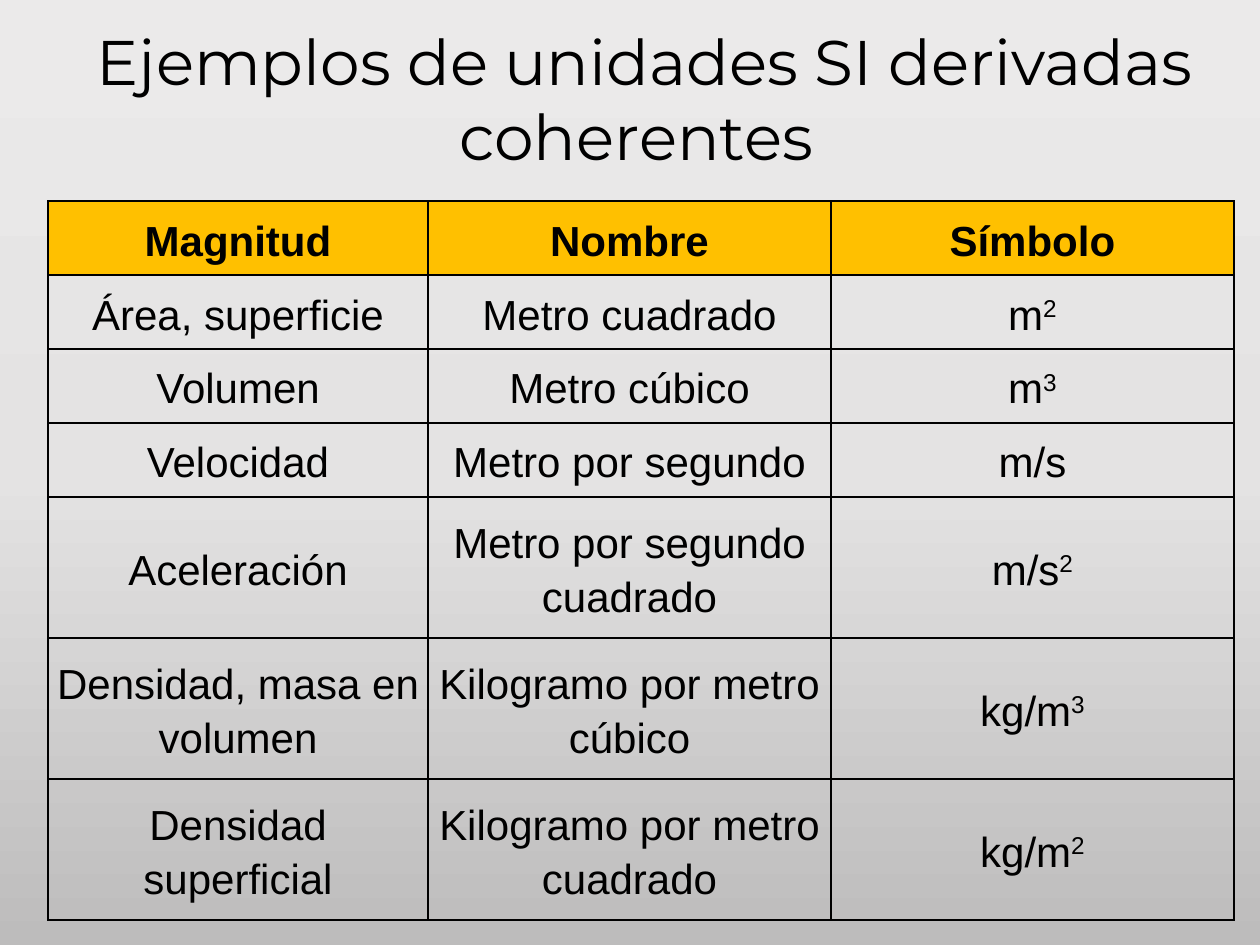
from copy import deepcopy

from lxml.etree import SubElement
from pptx import Presentation
from pptx.dml.color import RGBColor as Rgb
from pptx.enum.text import MSO_ANCHOR as Anchor, MSO_AUTO_SIZE as Fit, PP_ALIGN as Align
from pptx.oxml.ns import qn
from pptx.util import Emu, Pt

HUES = {"ink": "000000", "head": "FFC000", "top": "EBEAEA", "mid": "E4E3E3", "low": "BDBCBC"}
COLS = [380, 403, 403]
ROWS = [74] * 4 + [141] * 3
UNITS = [
    ("Magnitud", "Nombre", "Símbolo"),
    ("Área, superficie", "Metro cuadrado", "m^2"),
    ("Volumen", "Metro cúbico", "m^3"),
    ("Velocidad", "Metro por segundo", "m/s"),
    ("Aceleración", "Metro por segundo cuadrado", "m/s^2"),
    ("Densidad, masa en volumen", "Kilogramo por metro cúbico", "kg/m^3"),
    ("Densidad superficial", "Kilogramo por metro cuadrado", "kg/m^2"),
]


def px(num):
    return Emu(round(num * 914400 / 126))


def hue(name):
    return Rgb.from_string(HUES[name])


def style(run, face, size, bold=False):
    font = run.font
    font.name, font.size, font.bold = face, Pt(size), bold
    font.color.rgb = hue("ink")


def add_back(slide):
    fill = slide.background.fill
    fill.gradient()
    fill.gradient_angle = 270
    first = slide.element.find(".//" + qn("a:gs"))
    first.addnext(deepcopy(first))
    for stop, name, pos in zip(fill.gradient_stops, ("top", "mid", "low"), (0, 0.5, 1)):
        stop.color.rgb = hue(name)
        stop.position = pos


def add_title(slide, x, y, w, h):
    frame = slide.shapes.add_textbox(px(x), px(y), px(w), px(h)).text_frame
    frame.word_wrap = True
    frame.auto_size = Fit.SHAPE_TO_FIT_TEXT
    frame.text = "Ejemplos de unidades SI derivadas coherentes "
    para = frame.paragraphs[0]
    para.alignment = Align.CENTER
    style(para.runs[0], "Montserrat", 36)


def add_edges(cell):
    props = cell._tc.get_or_add_tcPr()
    for side in "LRTB":
        line = SubElement(props, qn(f"a:ln{side}"), w=str(Pt(1)))
        solid = SubElement(line, qn("a:solidFill"))
        SubElement(solid, qn("a:srgbClr"), val=HUES["ink"])


def fill_cell(cell, text, head):
    add_edges(cell)
    if head:
        cell.fill.solid()
        cell.fill.fore_color.rgb = hue("head")
    else:
        cell.fill.background()
    cell.vertical_anchor = Anchor.MIDDLE
    cell.margin_left = cell.margin_right = px(5)
    cell.margin_top = cell.margin_bottom = px(5)
    base, _, power = text.partition("^")
    para = cell.text_frame.paragraphs[0]
    para.text = base
    para.alignment = Align.CENTER
    para.line_spacing = 1.15
    para.space_after = Pt(10)
    if power:
        run = para.add_run()
        run.text = power
        run.font._element.set("baseline", "30000")
    for run in para.runs:
        style(run, "Arial", 24, head)


def add_units(slide, x, y):
    frame = slide.shapes.add_table(
        len(ROWS), len(COLS), px(x), px(y), px(sum(COLS)), px(sum(ROWS)))
    table = frame.table
    table.horz_banding = False
    for col, wide in zip(table.columns, COLS):
        col.width = px(wide)
    for i, (row, tall) in enumerate(zip(table.rows, ROWS)):
        row.height = px(tall)
        for cell, text in zip(row.cells, UNITS[i]):
            fill_cell(cell, text, i == 0)


def main():
    deck = Presentation()
    deck.slide_width, deck.slide_height = px(1260), px(945)
    slide = deck.slides.add_slide(deck.slide_layouts[6])
    add_back(slide)
    add_units(slide, 48, 201)
    add_title(slide, 54, 16, 1181, 165)
    deck.save("out.pptx")


if __name__ == "__main__":
    main()
